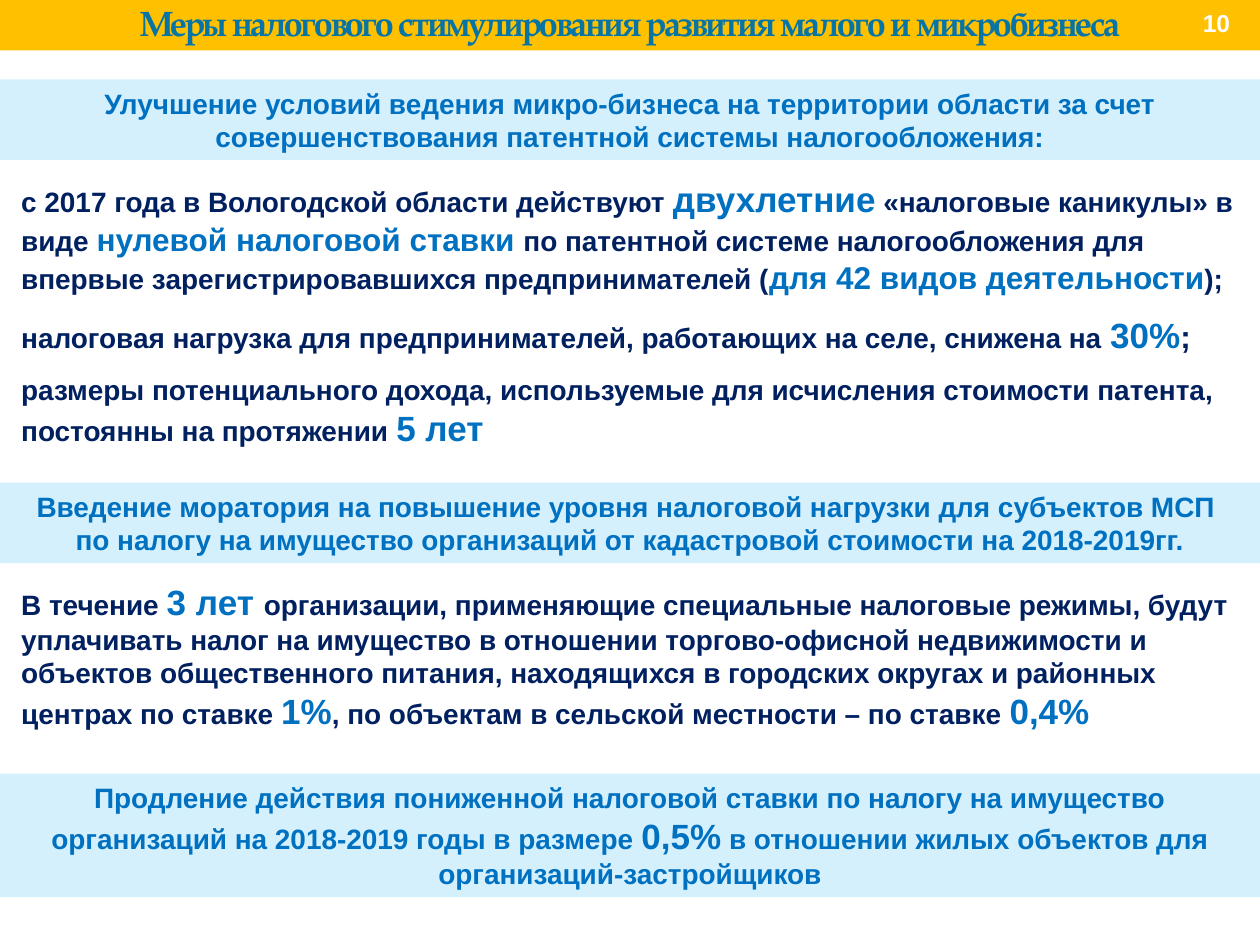
from dataclasses import dataclass

from lxml.etree import SubElement
from pptx import Presentation
from pptx.dml.color import RGBColor
from pptx.enum.shapes import MSO_SHAPE
from pptx.enum.text import MSO_ANCHOR, MSO_AUTO_SIZE, PP_ALIGN
from pptx.oxml.ns import qn
from pptx.util import Pt


@dataclass(frozen=True)
class Theme:
    header: RGBColor = RGBColor.from_string("FFC000")
    title: RGBColor = RGBColor.from_string("0674A5")
    band: RGBColor = RGBColor.from_string("D4F0FD")
    accent: RGBColor = RGBColor.from_string("0070C0")
    body: RGBColor = RGBColor.from_string("002060")
    white: RGBColor = RGBColor.from_string("FFFFFF")
    font: str = "Arial"
    title_font: str = "TeX Gyre Pagella"
    number_size: int = 14
    text_size: int = 16
    medium_size: int = 18
    large_size: int = 20


theme = Theme()


def format_run(run, size, color, font=theme.font):
    run.font.size = Pt(size)
    run.font.bold = True
    run.font.name = font
    run.font.color.rgb = color


def write_paragraphs(shape, paragraphs, color, alignment, space_after=0):
    frame = shape.text_frame
    frame.word_wrap = True
    frame.vertical_anchor = MSO_ANCHOR.MIDDLE
    for index, segments in enumerate(paragraphs):
        paragraph = frame.add_paragraph() if index else frame.paragraphs[0]
        paragraph.alignment = alignment
        paragraph.space_after = Pt(space_after)
        for text, size in segments:
            if text == "\v":
                paragraph.add_line_break()
                line_break = paragraph._p.findall(qn("a:br"))[-1]
                SubElement(line_break, qn("a:rPr"), sz=str(size * 100))
                continue
            run = paragraph.add_run()
            run.text = text
            emphasized = size > theme.text_size and text != ";"
            format_run(run, size, theme.accent if emphasized else color)


text_size, medium, large = theme.text_size, theme.medium_size, theme.large_size

bands = [
    (45.36, 46.08, [
        ("Улучшение условий ведения микро-бизнеса на территории области за счет "
         "совершенствования патентной системы налогообложения:", text_size),
    ]),
    (275.76, 46.08, [
        ("Введение моратория на повышение уровня налоговой нагрузки для субъектов МСП ", text_size),
        ("\v", text_size),
        ("по налогу на имущество организаций от кадастровой стоимости на 2018-2019гг.", text_size),
    ]),
    (442.08, 70.56, [
        ("Продление действия пониженной налоговой ставки по налогу на имущество "
         "организаций на 2018-2019 годы в размере ", text_size),
        ("0,5%", large),
        (" в отношении жилых объектов для организаций-застройщиков", text_size),
    ]),
]

bodies = [
    (97.2, 163.44, [
        [
            ("с 2017 года в Вологодской области действуют ", text_size),
            ("двухлетние", large),
            (" «налоговые каникулы» в виде ", text_size),
            ("нулевой налоговой ставки ", medium),
            ("по патентной системе налогообложения для впервые "
             "зарегистрировавшихся предпринимателей (", text_size),
            ("для 42 видов деятельности", medium),
            (");", text_size),
        ],
        [
            ("налоговая нагрузка для предпринимателей, работающих на селе, снижена на ", text_size),
            ("30%", large),
            (";", medium),
        ],
        [
            ("размеры потенциального дохода, используемые для исчисления стоимости "
             "патента, постоянны на протяжении ", text_size),
            ("5 лет", large),
        ],
    ]),
    (327.6, 94.32, [
        [
            ("В течение ", text_size),
            ("3 лет ", large),
            ("организации, применяющие специальные налоговые режимы, будут уплачивать "
             "налог на имущество в отношении торгово-офисной недвижимости и объектов "
             "общественного питания, находящихся в городских округах и районных "
             "центрах по ставке ", text_size),
            ("1%", large),
            (", по объектам в сельской местности – по ставке ", text_size),
            ("0,4%", large),
        ],
    ]),
]

presentation = Presentation()
presentation.slide_width = Pt(720)
presentation.slide_height = Pt(540)
slide = presentation.slides.add_slide(presentation.slide_layouts[5])

title = slide.shapes.title
title.left, title.top, title.width, title.height = Pt(0), Pt(0), Pt(720), Pt(28.8)
title.fill.solid()
title.fill.fore_color.rgb = theme.header
title.text_frame.text = "Меры налогового стимулирования развития малого и микробизнеса"
title.text_frame.auto_size = MSO_AUTO_SIZE.NONE
title.text_frame.vertical_anchor = MSO_ANCHOR.MIDDLE
title_paragraph = title.text_frame.paragraphs[0]
title_paragraph.alignment = PP_ALIGN.CENTER
title_paragraph.line_spacing = 0.9
title_run = title_paragraph.runs[0]
format_run(title_run, theme.large_size, theme.title, theme.title_font)
title_run.font._element.set("spc", "-100")

number = slide.shapes.add_textbox(Pt(671.76), Pt(0), Pt(46.8), Pt(25.92))
write_paragraphs(number, [[("10", theme.number_size)]], theme.white, PP_ALIGN.CENTER)

for top, height, paragraphs in bodies:
    body = slide.shapes.add_textbox(Pt(5.04), Pt(top), Pt(709.92), Pt(height))
    write_paragraphs(body, paragraphs, theme.body, PP_ALIGN.LEFT, space_after=10)

for top, height, segments in bands:
    band = slide.shapes.add_shape(MSO_SHAPE.RECTANGLE, Pt(0), Pt(top), Pt(720), Pt(height))
    band.shadow.inherit = False
    band.fill.solid()
    band.fill.fore_color.rgb = theme.band
    band.line.fill.background()
    write_paragraphs(band, [segments], theme.accent, PP_ALIGN.CENTER)

presentation.save("out.pptx")
